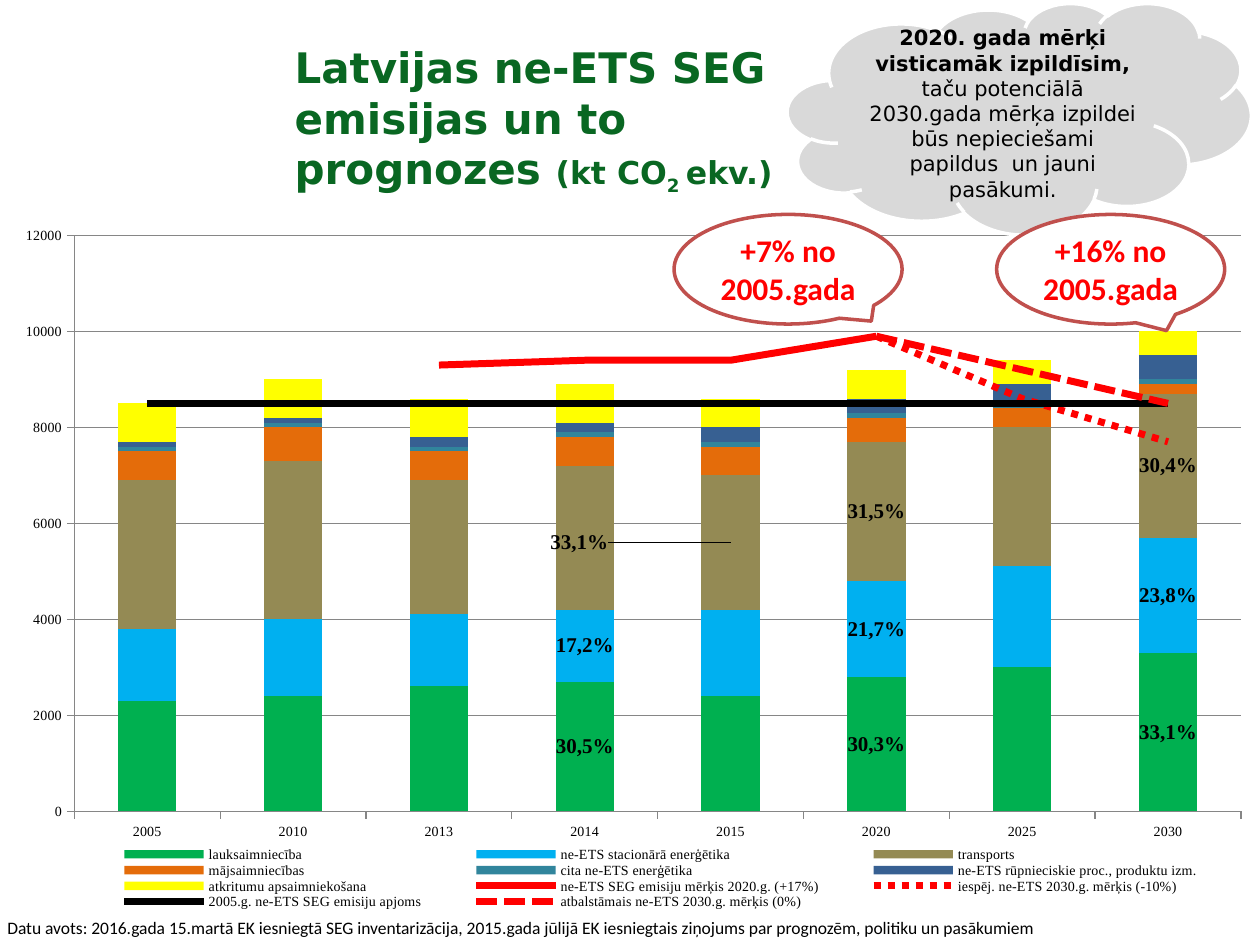
"""Build the slide on Latvian non-ETS greenhouse gas emissions and forecasts."""
from pptx import Presentation
from pptx import util as u
from pptx.chart.data import CategoryChartData
from pptx.dml.color import RGBColor
from pptx.enum import chart as ch, dml, shapes, text
from pptx.oxml import parse_xml
from pptx.oxml.ns import qn

W, H = 10, 7.5
C = dict(green="096722", cloud="D9D9D9", white="FFFFFF", black="000000", red="FF0000",
         callout="C0504D", grid="868686", farm="00B050", energy="00B0F0", transport="948A54",
         homes="E46C0A", other="31859C", industry="376092", waste="FFFF00")
YEARS = ["2005", "2010", "2013", "2014", "2015", "2020", "2025", "2030"]
GAP = [None]
BARS = [
    ("lauksaimniecība", "farm", [2300, 2400, 2600, 2700, 2400, 2800, 3000, 3300],
     {3: "30,5%", 5: "30,3%", 7: "33,1%"}),
    ("ne-ETS stacionārā enerģētika", "energy", [1500, 1600, 1500, 1500, 1800, 2000, 2100, 2400],
     {3: "17,2%", 5: "21,7%", 7: "23,8%"}),
    ("transports", "transport", [3100, 3300, 2800, 3000, 2800, 2900, 2900, 3000],
     {4: "33,1%", 5: "31,5%", 7: "30,4%"}),
    ("mājsaimniecības", "homes", [600, 700, 600, 600, 600, 500, 400, 200], {}),
    ("cita ne-ETS enerģētika", "other", [100] * 8, {}),
    ("ne-ETS rūpnieciskie proc., produktu izm.", "industry",
     [100, 100, 200, 200, 300, 300, 400, 500], {}),
    ("atkritumu apsaimniekošana", "waste", [800, 800, 800, 800, 600, 600, 500, 500], {}),
]
LINES = [
    ("ne-ETS SEG emisiju mērķis 2020.g. (+17%)", "red",
     GAP * 2 + [9300, 9400, 9400, 9900] + GAP * 2, None),
    ("iespēj. ne-ETS 2030.g. mērķis (-10%)", "red",
     GAP * 5 + [9900, 8600, 7700], dml.MSO_LINE.ROUND_DOT),
    ("2005.g. ne-ETS SEG emisiju apjoms", "black", [8500] * 8, None),
    ("atbalstāmais ne-ETS 2030.g. mērķis (0%)", "red",
     GAP * 5 + [9900, 9200, 8500], dml.MSO_LINE.SQUARE_DOT),
]
PLOT = (0.06, 0.03, 0.925, 0.82)
LEGEND = (0.06, 0.9, 0.93, 0.09)
TITLE = [("Latvijas ne-ETS SEG emisijas un to prognozes ", {}), ("(kt CO", dict(size=18)),
         ("2 ", dict(size=18, base=-25)), ("ekv.)", dict(size=18))]
CLOUD = [("2020. gada mērķi visticamāk izpildīsim, ", dict(bold=True)),
         ("taču potenciālā 2030.gada mērķa izpildei būs nepieciešami papildus  un jauni pasākumi.", {})]
SOURCE = ("Datu avots: 2016.gada 15.martā EK iesniegtā SEG inventarizācija, 2015.gada jūlijā EK "
          "iesniegtais ziņojums par prognozēm, politiku un pasākumiem")
CALLOUTS = [("+7% no 2005.gada", 0.535, (0.365, 0.473)),
            ("+16% no 2005.gada", 0.791, (0.245, 0.56))]


def rgb(name):
    return RGBColor.from_string(C[name])


def box(x, y, w, h):
    return [u.Inches(v) for v in (x * W, y * H, w * W, h * H)]


def style(font, face, size, color, bold=False):
    font.name, font.size, font.bold = face, u.Pt(size), bold
    font.color.rgb = rgb(color)


def write(tf, runs, face="Calibri", size=10, color="black", bold=False, align=None, anchor=None):
    tf.word_wrap = True
    if anchor is not None:
        tf.vertical_anchor = anchor
    p = tf.paragraphs[0]
    p.alignment = align
    for words, own in [(runs, {})] if isinstance(runs, str) else runs:
        r = p.add_run()
        r.text = words
        style(r.font, face, own.get("size", size), color, own.get("bold", bold))
        if "base" in own:
            r.font._element.set("baseline", str(own["base"] * 1000))


def add_balloon(s, kind, place, fill, line, runs, **fmt):
    sp = s.shapes.add_shape(kind, *box(*place))
    sp.shadow.inherit = False
    sp.fill.solid()
    sp.fill.fore_color.rgb = rgb(fill)
    sp.line.color.rgb = rgb(line)
    sp.line.width = u.Pt(2)
    write(sp.text_frame, runs, align=text.PP_ALIGN.CENTER, anchor=text.MSO_ANCHOR.MIDDLE, **fmt)
    return sp


def make(tag, parent=None, **attrs):
    el = parse_xml(f'<c:{tag} xmlns:c="http://schemas.openxmlformats.org/drawingml/2006/chart"/>')
    for key, value in attrs.items():
        el.set(key, str(value))
    if parent is not None:
        parent.append(el)
    return el


def drop(parent, tag):
    for old in parent.findall(qn(tag)):
        parent.remove(old)


def layout(**settings):
    el = make("layout")
    manual = make("manualLayout", el)
    for tag, value in settings.items():
        make(tag, manual, val=value)
    return el


def frame(place, **target):
    x, y, w, h = place
    return layout(**target, xMode="edge", yMode="edge", x=x, y=y, w=w, h=h)


def split_lines(chart):
    bars = chart.plots[0]._element
    lines = make("lineChart")
    make("grouping", lines, val="standard")
    make("varyColors", lines, val=0)
    for ser in bars.findall(qn("c:ser"))[len(BARS):]:
        drop(ser, "c:invertIfNegative")
        lines.append(ser)
    make("marker", lines, val=1)
    for axis in bars.findall(qn("c:axId")):
        make("axId", lines, val=axis.get("val"))
    bars.addnext(lines)


def add_emissions(s):
    data = CategoryChartData(number_format="0")
    data.categories = YEARS
    for name, _, values, _ in BARS + LINES:
        data.add_series(name, values)
    chart = s.shapes.add_chart(ch.XL_CHART_TYPE.COLUMN_STACKED,
                               *box(-0.001, 0.227, 1.001, 0.743), data).chart
    style(chart.font, "Times New Roman", 8, "black")
    chart.has_title = False
    bars = chart.plots[0]
    bars.gap_width, bars.overlap, bars.vary_by_categories = 150, 100, False
    split_lines(chart)
    for ser, (_, color, _, labels) in zip(chart.plots[0].series, BARS):
        ser.format.fill.solid()
        ser.format.fill.fore_color.rgb = rgb(color)
        for i, label in labels.items():
            dl = ser.points[i].data_label
            write(dl.text_frame, label, face="Times New Roman", size=12, bold=True)
            if YEARS[i] == "2015":
                idx = dl._get_or_add_dLbl().find(qn("c:idx"))
                idx.addnext(layout(x=round(-PLOT[2] / len(YEARS), 2), y=0))
        if labels:
            ser.data_labels.show_value = False
    for ser, (_, color, _, dash) in zip(chart.plots[1].series, LINES):
        ser.smooth = False
        ser.marker.style = ch.XL_MARKER_STYLE.NONE
        ser.format.line.color.rgb = rgb(color)
        ser.format.line.width = u.Pt(4)
        if dash:
            ser.format.line.dash_style = dash
    val = chart.value_axis
    val.minimum_scale, val.maximum_scale, val.major_unit = 0, 12000, 2000
    val.tick_labels.number_format, val.tick_labels.number_format_is_linked = "0", False
    for ax in (val, chart.category_axis):
        ax.major_tick_mark = ch.XL_TICK_MARK.OUTSIDE
        ax.format.line.color.rgb = rgb("grid")
    val.major_gridlines.format.line.color.rgb = rgb("grid")
    chart.has_legend = True
    legend = chart.legend
    legend.position, legend.include_in_layout = ch.XL_LEGEND_POSITION.BOTTOM, False
    area = chart._chartSpace.chart.plotArea
    for parent in (area, legend._element):
        drop(parent, "c:layout")
    area.insert(0, frame(PLOT, layoutTarget="inner"))
    legend._element.find(qn("c:legendPos")).addnext(frame(LEGEND))


def main():
    prs = Presentation()
    prs.slide_width, prs.slide_height = u.Inches(W), u.Inches(H)
    s = prs.slides.add_slide(prs.slide_layouts[6])
    add_emissions(s)
    write(s.shapes.add_textbox(*box(0.224, 0.036, 0.441, 0.18)).text_frame, TITLE,
          face="DejaVu Sans", size=24, color="green", bold=True, anchor=text.MSO_ANCHOR.MIDDLE)
    kind = shapes.MSO_SHAPE
    add_balloon(s, kind.CLOUD, (0.625, 0.003, 0.368, 0.245), "cloud", "white", CLOUD,
                face="DejaVu Sans", size=12)
    for words, x, tip in CALLOUTS:
        sp = add_balloon(s, kind.OVAL_CALLOUT, (x, 0.227, 0.181, 0.116), "white", "callout",
                         words, size=18, color="red", bold=True)
        sp.adjustments[0], sp.adjustments[1] = tip
    write(s.shapes.add_textbox(*box(-0.004, 0.964, 1, 0.036)).text_frame, SOURCE)
    prs.save("out.pptx")


if __name__ == "__main__":
    main()
